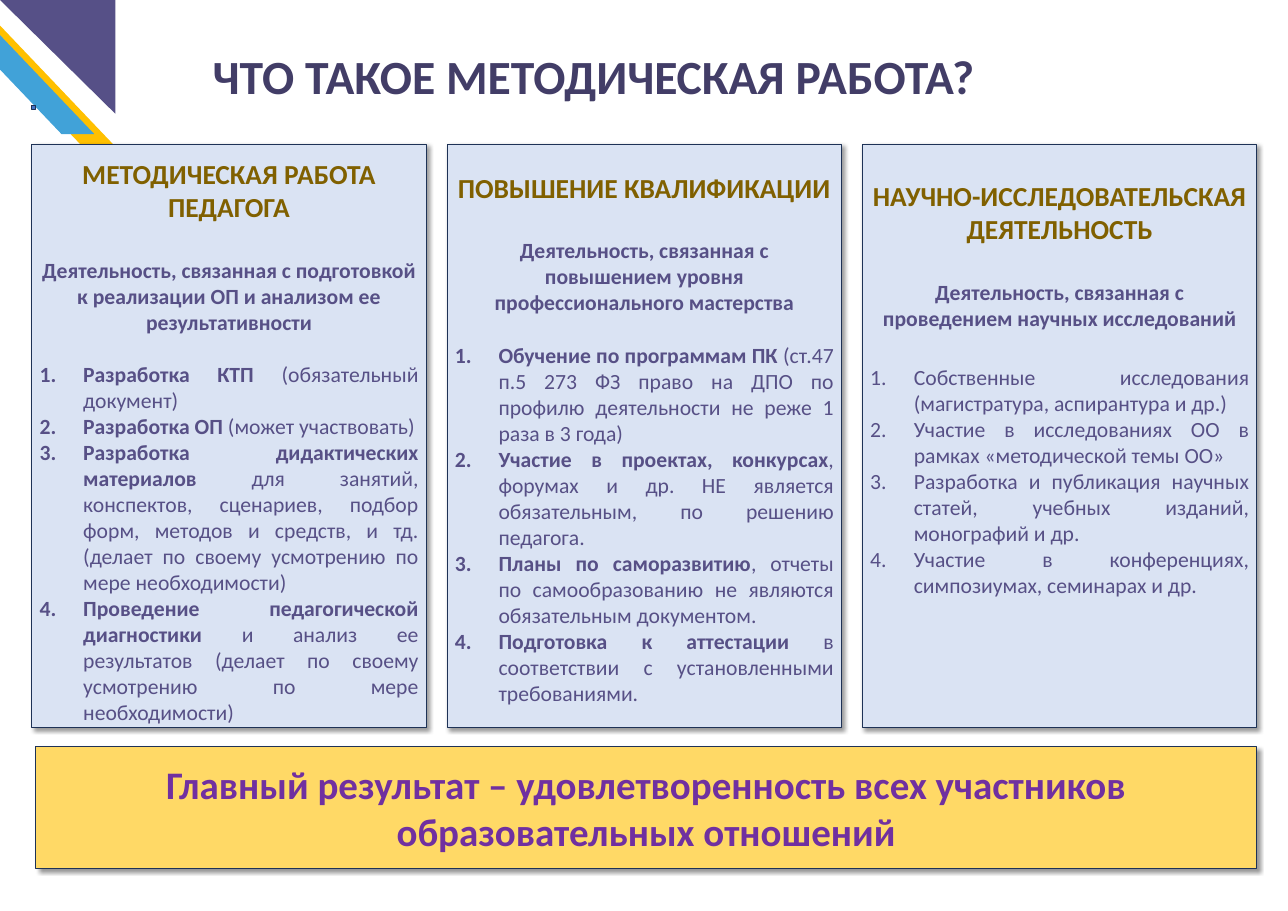
from lxml import etree
from pptx import Presentation
from pptx import util as u
from pptx.dml import color
from pptx.enum import shapes, text
from pptx.oxml import ns

PX = 9144  # EMU per px, 100 px to the inch
INDENT = 56
NAVY, VIOLET, OLIVE = "1E3256", "575086", "806000"
KIND = shapes.MSO_SHAPE
ALIGN = text.PP_ALIGN

# Each panel: top inset, heading, summary, gap before list (pt), list of (bold, plain)
PANELS = [
    (17, "МЕТОДИЧЕСКАЯ РАБОТА ПЕДАГОГА",
     "Деятельность, связанная с подготовкой к реализации ОП и анализом ее результативности", 24.4,
     [("Разработка КТП ", "(обязательный документ)"),
      ("Разработка ОП ", "(может участвовать)"),
      ("Разработка дидактических материалов ",
       "для занятий, конспектов, сценариев, подбор форм, методов и средств, и тд. "
       "(делает по своему усмотрению по мере необходимости)"),
      ("Проведение педагогической диагностики ",
       "и анализ ее результатов (делает по своему усмотрению по мере необходимости)")]),
    (34, "ПОВЫШЕНИЕ КВАЛИФИКАЦИИ",
     "Деятельность, связанная с повышением уровня профессионального мастерства", 24.4,
     [("Обучение по программам ПК ",
       "(ст.47 п.5 273 ФЗ право на ДПО по профилю деятельности не реже 1 раза в 3 года)"),
      ("Участие в проектах, конкурсах",
       ", форумах и др. НЕ является обязательным, по решению педагога."),
      ("Планы по саморазвитию",
       ", отчеты по самообразованию не являются обязательным документом."),
      ("Подготовка к аттестации ", "в соответствии с установленными требованиями.")]),
    (45, "НАУЧНО-ИССЛЕДОВАТЕЛЬСКАЯ ДЕЯТЕЛЬНОСТЬ",
     "Деятельность, связанная с проведением научных исследований", 31,
     [("", "Собственные исследования (магистратура, аспирантура и др.)"),
      ("", "Участие в исследованиях ОО в рамках «методической темы ОО»"),
      ("", "Разработка и публикация научных статей, учебных изданий, монографий и др."),
      ("", "Участие в конференциях, симпозиумах, семинарах и др.")]),
]


def px(n):
    return u.Emu(n * PX)


def rgb(value):
    return color.RGBColor.from_string(value)


def set_attrs(obj, values):
    for name, value in values.items():
        setattr(obj, name, value)


def add_shadow(s):
    effects = s.element.spPr.find(ns.qn("a:effectLst"))
    shadow = etree.SubElement(effects, ns.qn("a:outerShdw"), blurRad=str(u.Pt(4)),
                              dist=str(u.Pt(3)), dir="2700000", algn="tl", rotWithShape="0")
    black = etree.SubElement(shadow, ns.qn("a:srgbClr"), val="000000")
    etree.SubElement(black, ns.qn("a:alpha"), val="40000")


def add_block(slide, kind, box, fill, line=None, shadow=False, flips=(), adjust=None):
    s = slide.shapes.add_shape(kind, *map(px, box))
    s.shadow.inherit = False
    s.fill.solid()
    s.fill.fore_color.rgb = rgb(fill)
    if line:
        s.line.color.rgb = rgb(line)
        s.line.width = u.Pt(1)
    else:
        s.line.fill.background()
    if shadow:
        add_shadow(s)
    for flip in flips:
        s.element.spPr.find(ns.qn("a:xfrm")).set(flip, "1")
    if adjust is not None:
        s.adjustments[0] = adjust
    return s


def add_run(p, words, size, ink, bold=True):
    r = p.add_run()
    r.text = words
    set_attrs(r.font, {"name": "Calibri", "size": u.Pt(size), "bold": bold})
    r.font.color.rgb = rgb(ink)


def write_line(p, words, size, ink, align=ALIGN.CENTER, before=None):
    p.alignment = align
    if before:
        p.space_before = u.Pt(before)
    add_run(p, words, size, ink)


def write_item(p, bold, plain, before):
    pPr = p._p.get_or_add_pPr()
    pPr.set("marL", str(px(INDENT)))
    pPr.set("indent", str(px(-INDENT)))
    etree.SubElement(pPr, ns.qn("a:buAutoNum"), type="arabicPeriod")
    p.alignment = ALIGN.JUSTIFY
    if before:
        p.space_before = u.Pt(before)
    if bold:
        add_run(p, bold, 20, VIOLET)
    add_run(p, plain, 20, VIOLET, bold=False)


def add_panel(slide, left, inset, heading, summary, gap, items):
    s = add_block(slide, KIND.RECTANGLE, (left, 185, 506, 749), "DAE3F3", NAVY, shadow=True)
    tf = s.text_frame
    set_attrs(tf, {"word_wrap": True, "vertical_anchor": text.MSO_ANCHOR.TOP,
                   "margin_top": px(inset)})
    write_line(tf.paragraphs[0], heading, 25.4, OLIVE)
    write_line(tf.add_paragraph(), summary, 20, VIOLET, before=31)
    for i, (bold, plain) in enumerate(items):
        write_item(tf.add_paragraph(), bold, plain, before=0 if i else gap)


def main():
    prs = Presentation()
    set_attrs(prs, {"slide_width": px(1653), "slide_height": px(1169)})
    slide = prs.slides.add_slide(prs.slide_layouts[6])

    # Corner ornament
    for box, fill in (((-79, -6, 227, 194), "FFC000"), ((-106, -22, 227, 194), "41A2D8")):
        add_block(slide, KIND.PARALLELOGRAM, box, fill, flips=["flipH"], adjust=0.953)
    add_block(slide, KIND.RIGHT_TRIANGLE, (0, 0, 148, 146), "565087", flips=["flipH", "flipV"])

    # Title
    tf = slide.shapes.add_textbox(*map(px, (263, 55, 1175, 84))).text_frame
    tf.word_wrap = True
    write_line(tf.paragraphs[0], "ЧТО ТАКОЕ МЕТОДИЧЕСКАЯ РАБОТА?", 44, "423D67", ALIGN.LEFT)

    # Three panels
    for i, panel in enumerate(PANELS):
        add_panel(slide, 41 + 533 * i, *panel)

    # Small square marker
    add_block(slide, KIND.RECTANGLE, (41, 135, 5, 5), "4472C4", NAVY)

    # Result banner
    s = add_block(slide, KIND.RECTANGLE, (46, 958, 1567, 156), "FFD966", NAVY, shadow=True)
    set_attrs(s.text_frame, {"word_wrap": True, "vertical_anchor": text.MSO_ANCHOR.MIDDLE})
    write_line(s.text_frame.paragraphs[0],
               "Главный результат – удовлетворенность всех участников образовательных отношений",
               36, "7030A0")

    prs.save("out.pptx")


if __name__ == "__main__":
    main()
